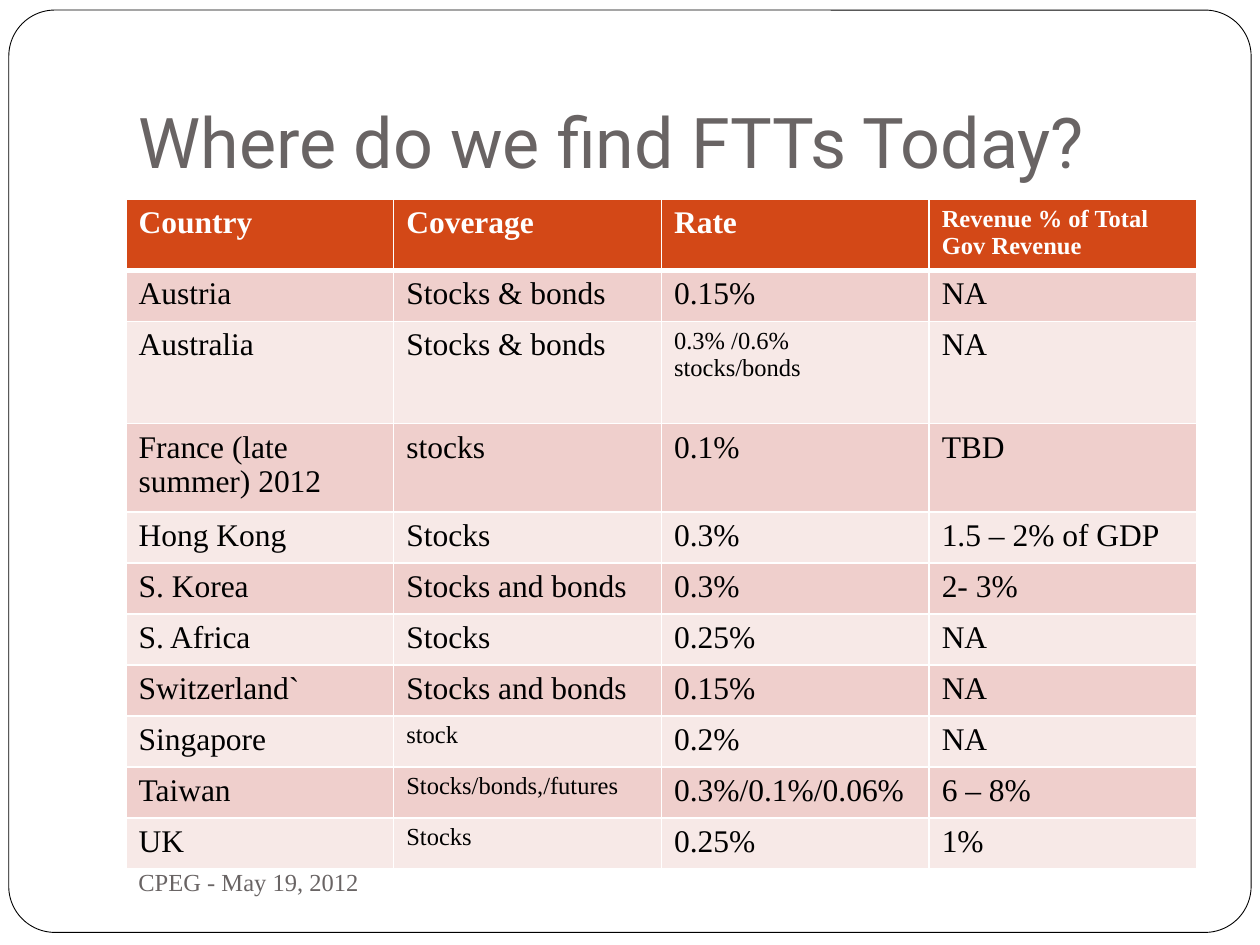
from lxml.etree import SubElement
from pptx import Presentation
from pptx.dml.color import RGBColor
from pptx.enum.shapes import MSO_SHAPE
from pptx.enum.text import MSO_ANCHOR, MSO_AUTO_SIZE, PP_ALIGN
from pptx.oxml.ns import qn
from pptx.util import Inches, Pt

TITLE = "Where do we find FTTs Today?"
FOOTER = "CPEG - May 19, 2012"
ROWS = [
    ("Country", "Coverage", "Rate", "Revenue % of Total Gov Revenue"),
    ("Austria", "Stocks & bonds", "0.15%", "NA"),
    ("Australia", "Stocks & bonds", "0.3% /0.6% stocks/bonds", "NA"),
    ("France (late summer) 2012", "stocks", "0.1%", "TBD"),
    ("Hong Kong", "Stocks", "0.3%", "1.5 – 2% of GDP"),
    ("S. Korea", "Stocks and bonds", "0.3%", "2- 3%"),
    ("S. Africa", "Stocks", "0.25%", "NA"),
    ("Switzerland`", "Stocks and bonds", "0.15%", "NA"),
    ("Singapore", "stock", "0.2%", "NA"),
    ("Taiwan", "Stocks/bonds,/futures", "0.3%/0.1%/0.06%", "6 – 8%"),
    ("UK", "Stocks", "0.25%", "1%"),
]
SMALL_CELLS = {(0, 3), (2, 2), (8, 1), (9, 1), (10, 1)}
TALL_ROWS = {0: 0.53, 2: 0.81, 3: 0.65}
COLORS = {
    "white": "FFFFFF", "black": "000000", "gray": "696464",
    "header": "D34817", "odd": "EFCFCC", "even": "F7E9E7",
}
TITLE_FONT, BODY_FONT = "Roboto", "Times New Roman"
LEFT, WIDTH = 1, 8.5
TABLE_TOP, TABLE_HEIGHT = 1.58, 5.23


def color(name):
    return RGBColor.from_string(COLORS[name])


def style_text(text_frame, font_name, size, color_name, bold=False):
    for paragraph in text_frame.paragraphs:
        paragraph.alignment = PP_ALIGN.LEFT
        for run in paragraph.runs:
            run.font.name = font_name
            run.font.size = Pt(size)
            run.font.bold = bold
            run.font.color.rgb = color(color_name)


def set_border(cell, side, width):
    properties = cell._tc.get_or_add_tcPr()
    line = SubElement(properties, qn(f"a:ln{side}"), w=str(Pt(width)))
    fill = SubElement(line, qn("a:solidFill"))
    SubElement(fill, qn("a:srgbClr"), val=COLORS["white"])


def add_frame(slide):
    frame = slide.shapes.add_shape(
        MSO_SHAPE.ROUNDED_RECTANGLE,
        Inches(0.07), Inches(0.08), Inches(9.86), Inches(7.32))
    frame.adjustments[0] = 0.05
    frame.shadow.inherit = False
    frame.fill.solid()
    frame.fill.fore_color.rgb = color("white")
    frame.line.color.rgb = color("black")
    frame.line.width = Pt(0.5)
    slide.shapes._spTree.insert(2, frame._element)


def add_title(slide):
    title = slide.shapes.title
    title.left, title.top = Inches(LEFT), Inches(0.3)
    title.width, title.height = Inches(WIDTH), Inches(1.25)
    text_frame = title.text_frame
    text_frame.text = TITLE
    text_frame.auto_size = MSO_AUTO_SIZE.NONE
    text_frame.vertical_anchor = MSO_ANCHOR.BOTTOM
    text_frame.margin_bottom = Inches(0.1)
    style_text(text_frame, TITLE_FONT, 40, "gray")


def add_footer(slide):
    footer = slide.shapes.add_textbox(
        Inches(LEFT), Inches(6.75), Inches(4.33), Inches(0.5))
    text_frame = footer.text_frame
    text_frame.text = FOOTER
    text_frame.word_wrap = True
    text_frame.vertical_anchor = MSO_ANCHOR.MIDDLE
    style_text(text_frame, BODY_FONT, 14, "gray")


def add_rates_table(slide):
    table = slide.shapes.add_table(
        len(ROWS), len(ROWS[0]), Inches(LEFT), Inches(TABLE_TOP),
        Inches(WIDTH), Inches(TABLE_HEIGHT)).table
    regular = (TABLE_HEIGHT - sum(TALL_ROWS.values())) / (len(ROWS) - len(TALL_ROWS))
    for r, values in enumerate(ROWS):
        table.rows[r].height = Inches(TALL_ROWS.get(r, regular))
        is_header = r == 0
        fill_name = "header" if is_header else "odd" if r % 2 else "even"
        borders = {"L": 1, "R": 1, "T": 3 if r == 1 else 1, "B": 3 if is_header else 1}
        for c, value in enumerate(values):
            cell = table.cell(r, c)
            cell.text = value
            for side, width in borders.items():
                set_border(cell, side, width)
            cell.fill.solid()
            cell.fill.fore_color.rgb = color(fill_name)
            size = 14 if (r, c) in SMALL_CELLS else 18
            text_color = "white" if is_header else "black"
            style_text(cell.text_frame, BODY_FONT, size, text_color, is_header)


def main():
    presentation = Presentation()
    presentation.slide_width, presentation.slide_height = Inches(10), Inches(7.5)
    slide = presentation.slides.add_slide(presentation.slide_layouts[5])
    add_frame(slide)
    add_title(slide)
    add_footer(slide)
    add_rates_table(slide)
    presentation.save("out.pptx")


if __name__ == "__main__":
    main()
